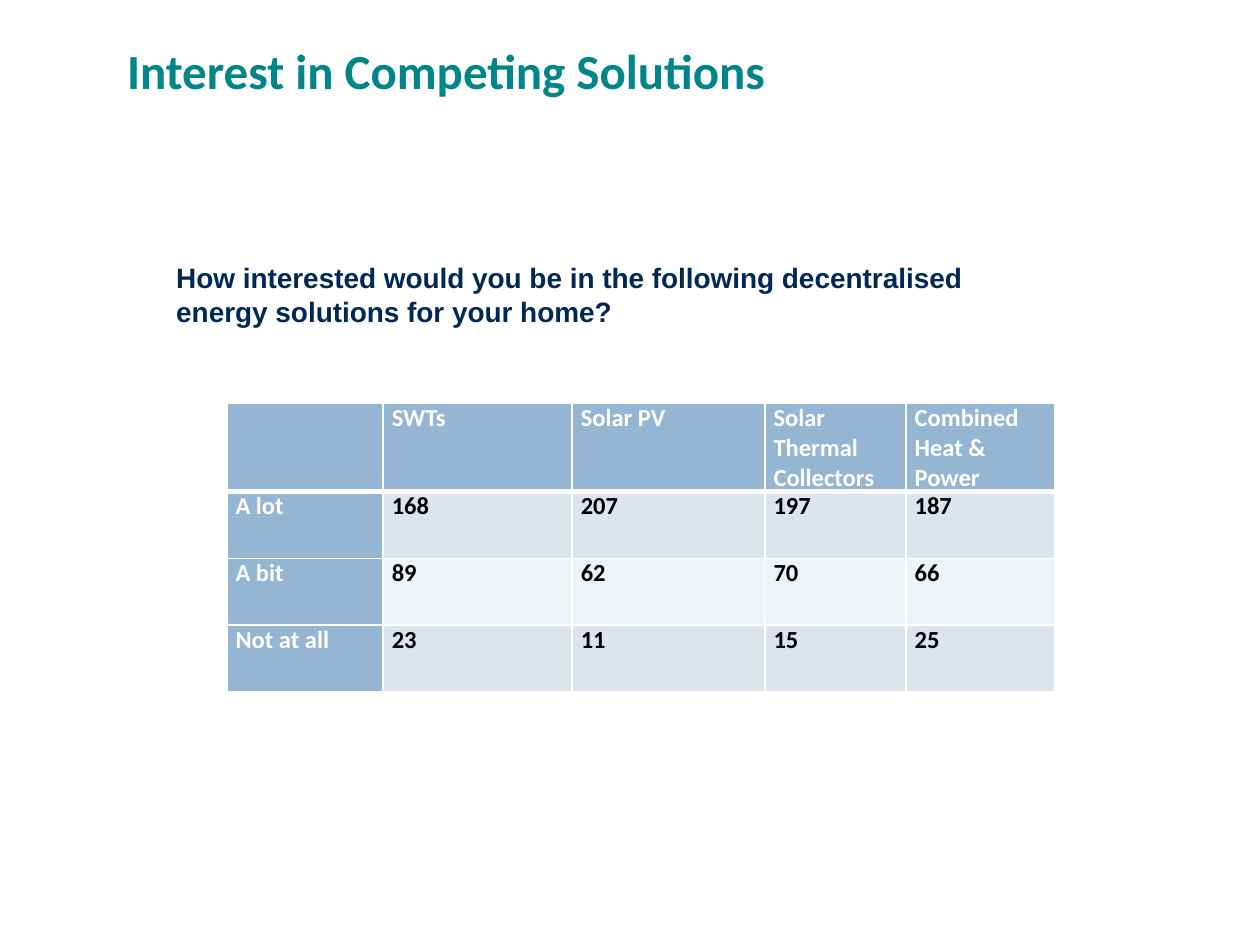
import pptx
import pptx.dml.color
import pptx.enum.text
import pptx.oxml
import pptx.oxml.ns
import pptx.util

TITLE = "Interest in Competing Solutions"
QUESTION = ("How interested would you be in the following decentralised "
            "energy solutions for your home?")
SOLUTIONS = ["", "SWTs", "Solar PV", "Solar Thermal Collectors", "Combined Heat & Power"]
ANSWERS = [
    ("A lot", 168, 207, 197, 187),
    ("A bit", 89, 62, 70, 66),
    ("Not at all", 23, 11, 15, 25),
]

THEME = {
    "title": {"name": "Calibri", "size": 28, "color": "008688"},
    "question": {"name": "Arial", "size": 16, "color": "002857"},
    "label": {"name": "Calibri", "size": 14, "color": "FFFFFF"},
    "value": {"name": "Calibri", "size": 14, "color": "000000"},
    "label_fill": "94B6D2",
    "band_fills": ["DCE5EE", "EEF3F7"],
    "border": "FFFFFF",
}

SLIDE_WIDTH, SLIDE_HEIGHT = 10, 7.5
TITLE_BOX = (0.91, 0, 8.98, 1.15)
QUESTION_BOX = (1.3, 2.02, 7.09, 0.64)
TABLE_LEFT, TABLE_TOP = 1.8, 3.2
COLUMN_WIDTHS = [1.24, 1.5, 1.53, 1.12, 1.18]
HEADER_HEIGHT, ANSWER_HEIGHT = 0.7, 0.53
CELL_FORMAT = {
    "margin_left": pptx.util.Inches(0.07),
    "margin_right": pptx.util.Inches(0.07),
    "margin_top": 0,
    "margin_bottom": 0,
}


def rgb(value):
    return pptx.dml.color.RGBColor.from_string(value)


def write(paragraph, text, style):
    paragraph.text = text
    font = paragraph.font if not text else paragraph.runs[0].font
    values = {"name": style["name"], "size": pptx.util.Pt(style["size"]), "bold": True}
    for name, value in values.items():
        setattr(font, name, value)
    font.color.rgb = rgb(style["color"])


def add_text(slide, box, text, style, anchor):
    shape = slide.shapes.add_textbox(*map(pptx.util.Inches, box))
    frame = shape.text_frame
    for name, value in {"word_wrap": True, "vertical_anchor": anchor}.items():
        setattr(frame, name, value)
    write(frame.paragraphs[0], text, style)
    return frame.paragraphs[0]


def add_borders(cell, widths):
    """Draw the cell's sides; widths maps L, R, T and B to points."""
    properties = cell._tc.get_or_add_tcPr()
    for side, width in widths.items():
        properties.append(pptx.oxml.parse_xml(
            f'<a:ln{side} {pptx.oxml.ns.nsdecls("a")} w="{pptx.util.Pt(width)}">'
            f'<a:solidFill><a:srgbClr val="{THEME["border"]}"/></a:solidFill>'
            f'</a:ln{side}>'))


def add_answer_table(slide):
    rows = [SOLUTIONS, *ANSWERS]
    heights = [HEADER_HEIGHT] + [ANSWER_HEIGHT] * len(ANSWERS)
    box = (TABLE_LEFT, TABLE_TOP, sum(COLUMN_WIDTHS), sum(heights))
    table = slide.shapes.add_table(
        len(rows), len(SOLUTIONS), *map(pptx.util.Inches, box)).table
    for column, width in zip(table.columns, COLUMN_WIDTHS):
        column.width = pptx.util.Inches(width)
    for row, height in zip(table.rows, heights):
        row.height = pptx.util.Inches(height)

    for row_index, row in enumerate(rows):
        band = THEME["band_fills"][(row_index - 1) % 2]
        for column_index, content in enumerate(row):
            cell = table.cell(row_index, column_index)
            is_label = row_index == 0 or column_index == 0
            for name, value in CELL_FORMAT.items():
                setattr(cell, name, value)
            add_borders(cell, {"L": 1, "R": 1,
                               "T": 3 if row_index == 1 else 1,
                               "B": 3 if row_index == 0 else 1})
            cell.fill.solid()
            cell.fill.fore_color.rgb = rgb(THEME["label_fill"] if is_label else band)
            write(cell.text_frame.paragraphs[0], str(content),
                  THEME["label" if is_label else "value"])


def main():
    presentation = pptx.Presentation()
    presentation.slide_width = pptx.util.Inches(SLIDE_WIDTH)
    presentation.slide_height = pptx.util.Inches(SLIDE_HEIGHT)
    slide = presentation.slides.add_slide(presentation.slide_layouts[6])
    anchors = pptx.enum.text.MSO_ANCHOR
    title = add_text(slide, TITLE_BOX, TITLE, THEME["title"], anchors.MIDDLE)
    title.line_spacing = pptx.util.Pt(31)
    add_answer_table(slide)
    add_text(slide, QUESTION_BOX, QUESTION, THEME["question"], anchors.TOP)
    presentation.save("out.pptx")


if __name__ == "__main__":
    main()
